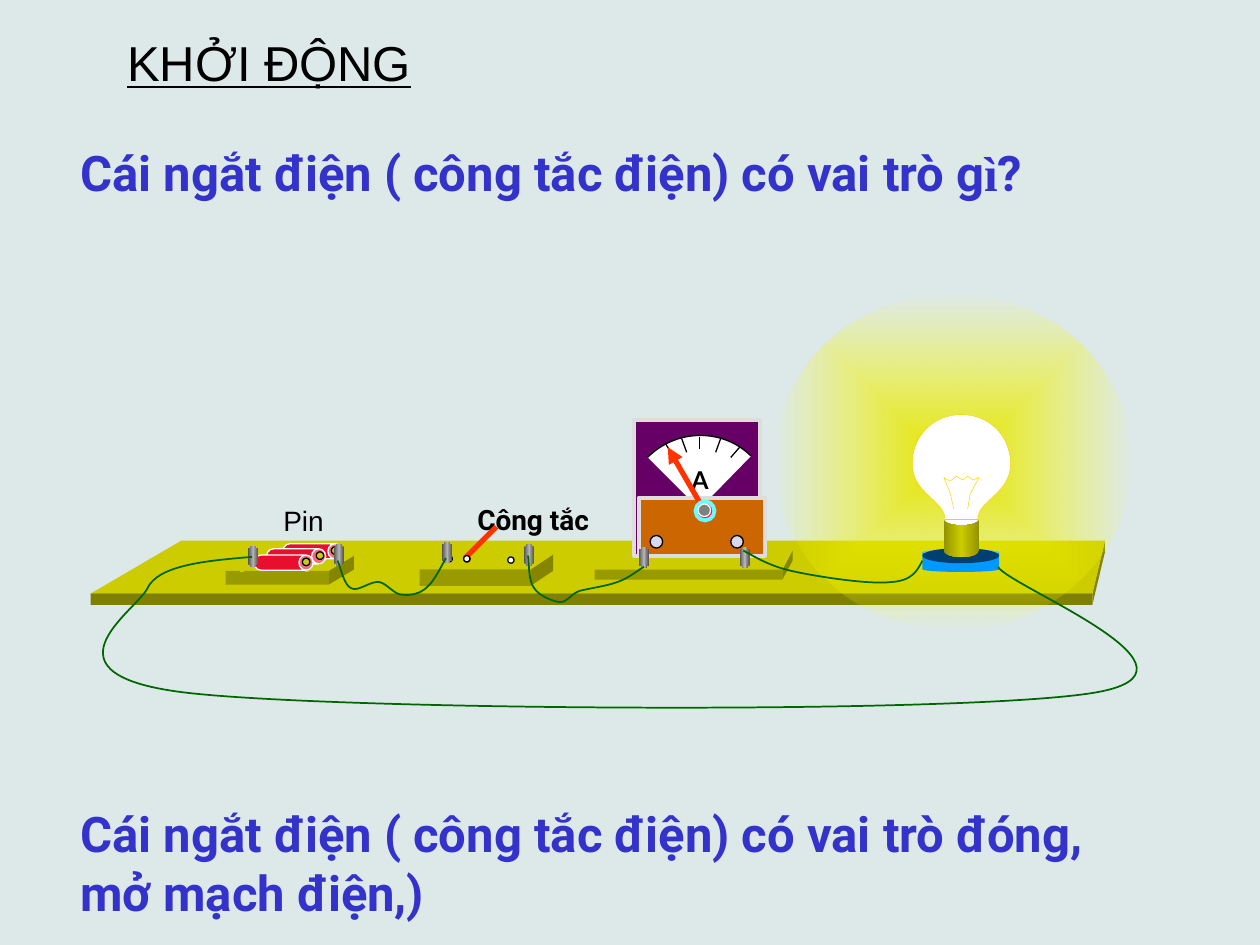
import pptx
import pptx.util
import pptx.dml.color
import pptx.enum.shapes
import pptx.enum.text
import pptx.oxml
from pptx.oxml.ns import qn

KIND = pptx.enum.shapes.MSO_SHAPE
NS = 'xmlns:a="http://schemas.openxmlformats.org/drawingml/2006/main"'
GOLD, RED, WIRE, BLUE = "CCCC00", "FF3300", "006600", "3333CC"
STEEL = [(0, "525252"), (50, "B2B2B2"), (100, "525252")]
BRASS = [(0, "929200"), (50, GOLD), (100, "929200")]

# Content: all places are in inches
TITLE = "KHỞI ĐỘNG"
# left, top, width, height, wrap, size, bold, colour, runs of (text, font)
TEXTS = [
    (2.15, 3.95, 0.75, 0.37, True, 16, False, "000000", [("Pin", "Arial")]),
    (0.54, 1.08, 8.63, 0.57, True, 28, True, BLUE,
     [("Cái ngắt điện ( công tắc điện) có vai trò g", "Roboto"),
      ("ì", "Times New Roman"), ("?", "Roboto")]),
    (0.54, 6.33, 8.63, 1.04, True, 28, True, BLUE,
     [("Cái ngắt điện ( công tắc điện) có vai trò đóng, mở mạch điện,)",
       "Roboto")]),
]
LABEL = (3.69, 3.94, 1.16, 0.37, False, 16, True, "000000",
         [("Công tắc", "Roboto")])
UNIT = (5.39, 3.64, 0.34, 0.33, False, 14, True, "000000", [("A", "Lato")])

# front left, front top, width, height, back shift left and right, back top
BLOCKS = [
    (0.72, 4.71, 7.95, 0.09, 0.72, 0.1, 4.29, "808000"),
    (1.79, 4.53, 0.82, 0.11, 0.2, 0.2, 4.41, "999900"),
    (3.33, 4.52, 0.88, 0.13, 0.18, 0.18, 4.4, "999900"),
    (4.72, 4.52, 1.49, 0.08, 0.12, 0.08, 4.37, "999900"),
]
CELLS = [(2.42, 4.14), (2.29, 4.18), (2.19, 4.23)]
TIPS = [(2.51, 4.38), (2.63, 4.34), (2.4, 4.43)]
PINS = [(3.54, 4.41), (4.03, 4.42), (3.68, 4.41)]
POSTS = [(1.97, 4.33), (2.65, 4.32), (3.51, 4.3), (4.16, 4.32),
         (5.07, 4.34), (5.87, 4.34)]
TICKS = [(5.55, 3.47, 5.55, 3.56), (5.28, 3.52, 5.34, 3.61),
         (5.87, 3.55, 5.8, 3.63), (5.41, 3.48, 5.45, 3.59),
         (5.72, 3.48, 5.68, 3.59)]
ARC = [(5.14, 3.63), (5.37, 3.4), (5.74, 3.4), (5.96, 3.62)]
HALF = [(7.63, 3.29), (7.85, 3.29), (8.02, 3.46), (8.02, 3.68),
        (8.02, 3.92), (7.76, 3.97), (7.76, 4.12),
        (7.76, 4.25), (7.8, 4.41), (7.63, 4.41)]
COIL = [(7.57, 4.04), (7.54, 3.91), (7.49, 3.79), (7.54, 3.82), (7.59, 3.78),
        (7.64, 3.81), (7.68, 3.78), (7.72, 3.81), (7.77, 3.79), (7.7, 3.92),
        (7.68, 4.04)]
# Each wire: a start, then three points for each curve
WIRES = [
    [(2.68, 4.45), (2.7, 4.49), (2.73, 4.65), (2.79, 4.67), (2.84, 4.7),
     (2.94, 4.61), (3.01, 4.62), (3.07, 4.63), (3.13, 4.72), (3.19, 4.72),
     (3.26, 4.73), (3.34, 4.71), (3.39, 4.66), (3.45, 4.61), (3.51, 4.48),
     (3.54, 4.43)],
    [(4.19, 4.41), (4.2, 4.45), (4.19, 4.61), (4.24, 4.67), (4.28, 4.73),
     (4.38, 4.77), (4.44, 4.78), (4.51, 4.78), (4.52, 4.72), (4.6, 4.69),
     (4.68, 4.67), (4.82, 4.65), (4.9, 4.62), (4.99, 4.59), (5.07, 4.52),
     (5.11, 4.5)],
    [(2, 4.42), (1.62, 4.45), (1.25, 4.49), (1.17, 4.67), (1.08, 4.85),
     (0.25, 5.36), (1.5, 5.5), (2.75, 5.64), (7.6, 5.67), (8.67, 5.5),
     (9.74, 5.33), (8.04, 4.67), (7.92, 4.5)],
    [(5.9, 4.37), (6.01, 4.43), (6.12, 4.5), (6.32, 4.54), (6.51, 4.58),
     (6.9, 4.64), (7.07, 4.62), (7.24, 4.61), (7.28, 4.53), (7.32, 4.45)],
]


def cm(inch):
    return pptx.util.Cm(inch * 2.54)


def rgb(code):
    return pptx.dml.color.RGBColor.from_string(code)


def paint(shape, fill=None, line=None, width=0.75):
    shape.shadow.inherit = False
    if fill:
        shape.fill.solid()
        shape.fill.fore_color.rgb = rgb(fill)
    else:
        shape.fill.background()
    if line:
        shape.line.color.rgb = rgb(line)
        shape.line.width = pptx.util.Pt(width)
    else:
        shape.line.fill.background()


def blend(shape, stops, way):
    marks = "".join(
        f'<a:gs pos="{pos * 1000}"><a:srgbClr val="{code}">'
        + "".join(f'<a:alpha val="{a}"/>' for a in alpha)
        + "</a:srgbClr></a:gs>" for pos, code, *alpha in stops)
    grad = pptx.oxml.parse_xml(
        f"<a:gradFill {NS}><a:gsLst>{marks}</a:gsLst>{way}</a:gradFill>")
    props = shape.element.spPr
    props.replace(props.find(qn("a:noFill")), grad)


def draw(kind, box, fill=None, line=None, width=0.75, turn=0):
    shape = shapes.add_shape(kind, *map(cm, box))
    shape.rotation = turn
    paint(shape, fill, line, width)
    return shape


def trace(points, fill=None, line=None, width=0.75, close=False, curve=False):
    spots = [(cm(x), cm(y)) for x, y in points]
    pen = shapes.build_freeform(*spots[0])
    pen.add_line_segments(spots[1:], close=close)
    shape = pen.convert_to_shape()
    paint(shape, fill, line, width)
    if curve:  # every three points become one Bezier curve
        track = shape.element.find(".//" + qn("a:path"))
        legs = track.findall(qn("a:lnTo"))
        for i in range(0, len(legs), 3):
            bend = pptx.oxml.parse_xml(f"<a:cubicBezTo {NS}/>")
            track.replace(legs[i], bend)
            bend.extend([leg[0] for leg in legs[i:i + 3]])
            for leg in legs[i + 1:i + 3]:
                track.remove(leg)
    return shape


def link(ends, color, width, arrow=False):
    line = shapes.add_connector(pptx.enum.shapes.MSO_CONNECTOR.STRAIGHT,
                                *map(cm, ends))
    line.line.color.rgb = rgb(color)
    line.line.width = pptx.util.Pt(width)
    props = line.element.spPr
    if arrow:
        props.find(qn("a:ln")).append(
            pptx.oxml.parse_xml(f'<a:tailEnd {NS} type="triangle"/>'))
    props.append(pptx.oxml.parse_xml(f"<a:effectLst {NS}/>"))


def write(x, y, w, h, wrap, size, bold, color, runs):
    frame = shapes.add_textbox(*map(cm, (x, y, w, h))).text_frame
    frame.word_wrap = wrap
    para = frame.paragraphs[0]
    para.font.size = pptx.util.Pt(size)
    para.font.bold = bold
    para.font.color.rgb = rgb(color)
    for text, face in runs:
        run = para.add_run()
        run.text = text
        run.font.name = face


deck = pptx.Presentation()
deck.slide_width, deck.slide_height = cm(10), cm(7.5)
slide = deck.slides.add_slide(deck.slide_layouts[5])
slide.background.fill.solid()
slide.background.fill.fore_color.rgb = rgb("DDE9E9")
shapes = slide.shapes

# Title
head = shapes.title
head.left, head.top, head.width, head.height = map(cm, (0.91, 0.21, 2.48, 0.57))
frame = head.text_frame
frame.text = TITLE
frame.word_wrap = False
frame.auto_size = pptx.enum.text.MSO_AUTO_SIZE.NONE
frame.vertical_anchor = pptx.enum.text.MSO_ANCHOR.TOP
para = frame.paragraphs[0]
para.alignment = pptx.enum.text.PP_ALIGN.LEFT
para.font.size, para.font.name = pptx.util.Pt(28), "Arial"
para.font.underline = True
para.font.color.rgb = rgb("000000")

# Board and bases
for x, y, w, h, near, far, back, dark in BLOCKS:
    end = x + w
    trace([(end, y), (end + far, back), (end + far, back + h), (end, y + h)],
          "858500", close=True)
    trace([(x, y), (x + near, back), (end + far, back), (end, y)],
          GOLD, close=True)
    draw(KIND.RECTANGLE, (x, y, w, h), dark)

# Battery
for x in (1.92, 2.44):
    link((x, 4.54, x, 4.45), GOLD, 2.25)
for x, y in CELLS:
    cell = draw(KIND.CAN, (x, y, 0.12, 0.47), "E80E2D", "FFFFFF", turn=90)
    cell.adjustments[0] = 0.94
for x, y in TIPS:
    draw(KIND.OVAL, (x, y, 0.06, 0.06), GOLD, "000000")

# Switch
write(*LABEL)
for x, y in PINS:
    draw(KIND.OVAL, (x, y, 0.05, 0.05), "FFFFFF", "000000")
link((3.69, 4.43, 3.94, 4.18), RED, 3)
draw(KIND.OVAL, (3.68, 4.41, 0.05, 0.05), "FFFFFF", "000000")

# Meter
draw(KIND.RECTANGLE, (5.03, 3.33, 1, 1.08), "660066", "DDDDDD", 2.25)
hub = (5.55, 4.04)
trace(ARC + [ARC[-1], hub, hub, hub, ARC[0], ARC[0]], "FFFFFF", curve=True)
trace(ARC, line="000000", curve=True)
draw(KIND.RECTANGLE, (5.07, 3.95, 1, 0.46), "CC6600", "DDDDDD", 2.25)
for x in (5.16, 5.8):
    draw(KIND.OVAL, (x, 4.25, 0.1, 0.1), "D8D8EC", "000000")
write(*UNIT)
for tick in TICKS:
    link(tick, "000000", 0.75)
link((5.56, 4, 5.3, 3.55), RED, 3, arrow=True)
draw(KIND.OVAL, (5.52, 3.98, 0.15, 0.15), "FF0066", "66FFFF", 2.25)
draw(KIND.OVAL, (5.54, 4, 0.1, 0.1), "808080", "FFFFFF")

# Terminals
for x, y in POSTS:
    post = draw(KIND.CROSS, (x, y, 0.08, 0.17))
    post.adjustments[0] = 0.25
    blend(post, STEEL, '<a:lin ang="0"/>')

# Glowing bulb
glow = draw(KIND.OVAL, (6.15, 2.33, 2.83, 2.67))
blend(glow, [(0, "E3E300"), (100, "FFFF00", 0)],
      '<a:path path="shape"><a:fillToRect l="50000" t="50000" r="50000" '
      'b="50000"/></a:path>')
draw(KIND.CAN, (7.32, 4.36, 0.61, 0.18), "0099FF")
draw(KIND.OVAL, (7.32, 4.35, 0.61, 0.12), "004070")
other = [(2 * 7.63 - x, y) for x, y in reversed(HALF[:-1])]
trace(HALF + other, "FFFFFF", "FFCC00", 0.25, curve=True)
trace(COIL, line="FFCC00", width=0.25)
link((7.5, 4.12, 7.76, 4.12), "FFCC00", 0.25)
cap = draw(KIND.FLOWCHART_STORED_DATA, (7.48, 4.13, 0.3, 0.28), turn=270)
blend(cap, BRASS, '<a:lin ang="5400000"/>')

# Wires and captions
for wire in WIRES:
    trace(wire, line=WIRE, width=1, curve=True)
for text in TEXTS:
    write(*text)

deck.save("out.pptx")
